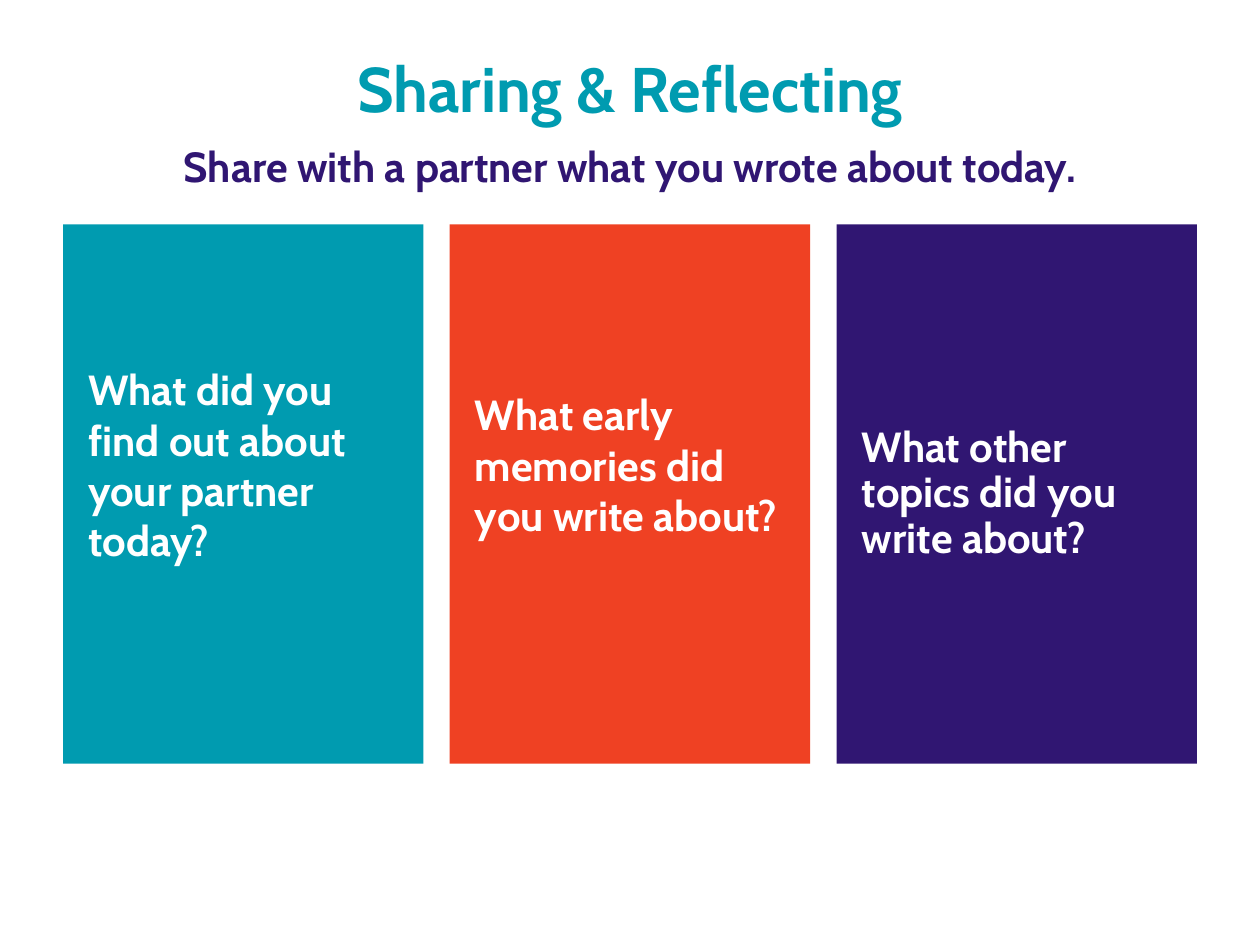
from dataclasses import dataclass

from pptx import Presentation
from pptx.dml.color import RGBColor
from pptx.enum.shapes import MSO_SHAPE
from pptx.enum.text import MSO_ANCHOR, MSO_AUTO_SIZE, PP_ALIGN
from pptx.slide import Slide
from pptx.text.text import TextFrame
from pptx.util import Pt

COLORS = {
    "teal": "009BB0",
    "orange": "EF4123",
    "purple": "301672",
    "white": "FFFFFF",
}
FONT = "Cabin"
MARGIN = 36
CONTENT_WIDTH = 648
CARD_TOP = 128.2
CARD_WIDTH = 206
CARD_HEIGHT = 308.2
CARD_INSET = 14.4


@dataclass
class Card:
    question: str
    color: str
    line_spacing: float = 1.0
    lift: float = 0


CARDS = [
    Card("What did you find out about your partner today?", "teal", lift=33.7),
    Card("What early memories did you write about?", "orange", lift=33.7),
    Card("What other topics did you write about?", "purple", line_spacing=0.9),
]


def write_text(frame: TextFrame, text: str, size: float, color: str,
               align: PP_ALIGN, line_spacing: float = 1.0) -> None:
    frame.word_wrap = True
    frame.auto_size = MSO_AUTO_SIZE.NONE
    frame.vertical_anchor = MSO_ANCHOR.MIDDLE
    paragraph = frame.paragraphs[0]
    paragraph.text = text
    paragraph.alignment = align
    paragraph.line_spacing = line_spacing
    paragraph.font.name = FONT
    paragraph.font.size = Pt(size)
    paragraph.font.bold = True
    paragraph.font.color.rgb = RGBColor.from_string(COLORS[color])


def draw_card(page: Slide, card: Card, left: float) -> None:
    box = page.shapes.add_shape(MSO_SHAPE.RECTANGLE, Pt(left), Pt(CARD_TOP),
                                Pt(CARD_WIDTH), Pt(CARD_HEIGHT))
    box.shadow.inherit = False
    box.fill.solid()
    box.fill.fore_color.rgb = RGBColor.from_string(COLORS[card.color])
    box.line.fill.background()
    frame = box.text_frame
    frame.margin_left = frame.margin_right = frame.margin_top = Pt(CARD_INSET)
    frame.margin_bottom = Pt(CARD_INSET + card.lift)
    write_text(frame, card.question, 24, "white", PP_ALIGN.LEFT, card.line_spacing)


def main() -> None:
    deck = Presentation()
    deck.slide_width, deck.slide_height = Pt(720), Pt(540)
    page = deck.slides.add_slide(deck.slide_layouts.get_by_name("Title Only"))

    title = page.shapes.title
    title.left, title.top = Pt(MARGIN), Pt(24.5)
    title.width, title.height = Pt(CONTENT_WIDTH), Pt(51)
    write_text(title.text_frame, "Sharing & Reflecting", 36, "teal", PP_ALIGN.CENTER)

    prompt = page.shapes.add_textbox(Pt(MARGIN), Pt(76.3), Pt(CONTENT_WIDTH), Pt(40.3))
    write_text(prompt.text_frame, "Share with a partner what you wrote about today.",
               24, "purple", PP_ALIGN.CENTER, 0.9)

    pitch = (CONTENT_WIDTH - CARD_WIDTH) / (len(CARDS) - 1)
    for index, card in enumerate(CARDS):
        draw_card(page, card, MARGIN + index * pitch)

    deck.save("out.pptx")


if __name__ == "__main__":
    main()
